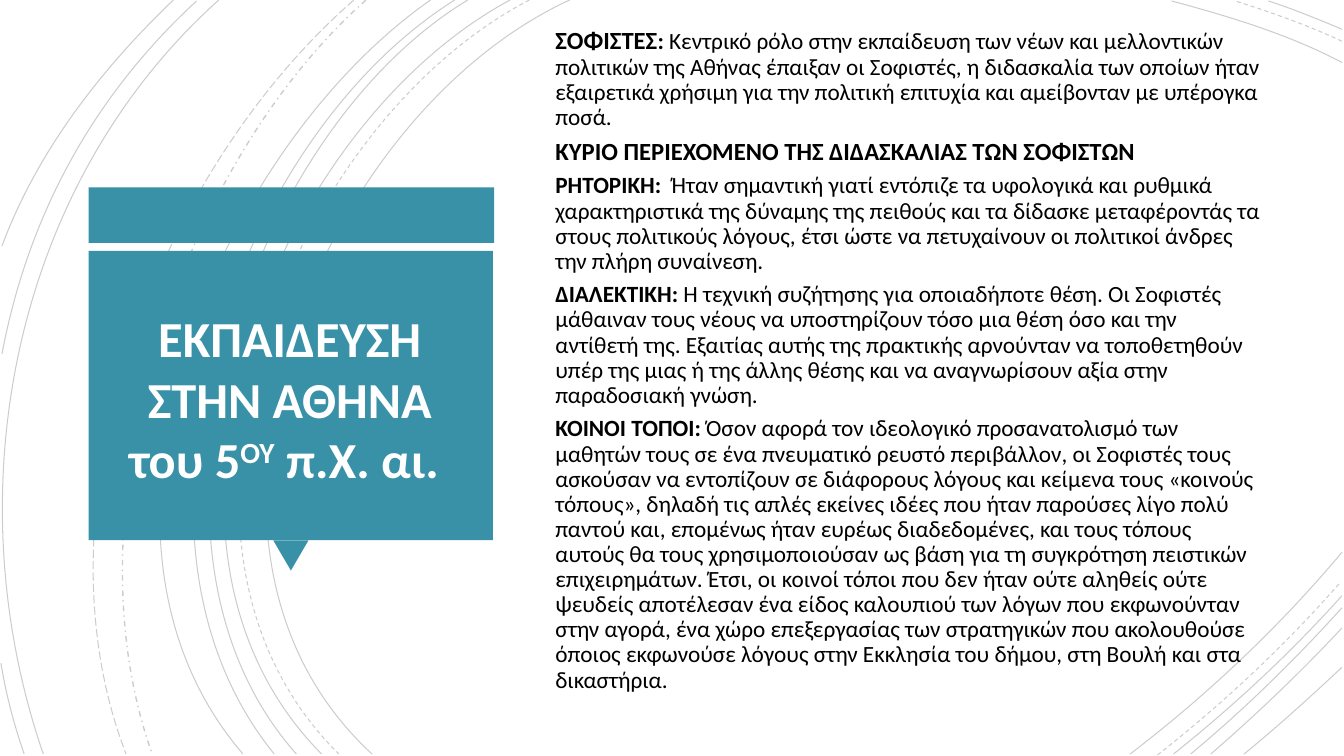
from typing import NamedTuple

from lxml.etree import SubElement
from pptx import Presentation
from pptx.dml.color import RGBColor
from pptx.enum.dml import MSO_LINE as DASH
from pptx.enum.shapes import MSO_SHAPE as SHAPE
from pptx.enum.text import MSO_ANCHOR as ANCHOR, MSO_AUTO_SIZE as AUTO, PP_ALIGN as ALIGN
from pptx.oxml.ns import qn
from pptx.util import Inches, Pt

TEAL = RGBColor(0x38, 0x91, 0xA7)
WHITE = RGBColor(0xFF, 0xFF, 0xFF)
BLACK = RGBColor(0x00, 0x00, 0x00)
FONT = "Calibri"
HEAD_SIZE, BODY_SIZE, TITLE_SIZE = 17.6, 16.6, 36


class Arc(NamedTuple):
    points: tuple
    dash: DASH = DASH.SOLID
    width: float = 0.75


class Panel(NamedTuple):
    kind: SHAPE
    box: tuple
    rotation: int = 0


class Span(NamedTuple):
    text: str
    size: float = BODY_SIZE
    bold: bool = False
    color: RGBColor = BLACK
    baseline: int = 0


ARCS = [
    Arc(((5.65, 0), (3.15, 1.15), (1.43, 5.4), (3.69, 7.48))),
    Arc(((13.31, 0.62), (12.78, 0.34), (12.18, 0.16), (11.62, 0.01))),
    Arc(((11.21, 7.48), (11.97, 6.9), (12.69, 6.22), (13.31, 5.48))),
    Arc(((5.25, 0), (2.85, 1.25), (1.23, 5.37), (3.36, 7.48)), DASH.DASH),
    Arc(((13.31, 0.41), (12.97, 0.25), (12.6, 0.12), (12.25, 0.01)), DASH.DASH),
    Arc(((11.48, 7.49), (12.13, 6.98), (12.75, 6.4), (13.3, 5.77)), DASH.DASH),
    Arc(((5.06, 0), (2.7, 1.27), (1.1, 5.37), (3.19, 7.48))),
    Arc(((13.31, 0.29), (13.07, 0.19), (12.83, 0.09), (12.58, 0.01))),
    Arc(((11.64, 7.48), (12.23, 7.01), (12.8, 6.48), (13.31, 5.91))),
    Arc(((4.64, 0), (2.44, 1.33), (1.1, 5.41), (2.94, 7.48))),
    Arc(((11.81, 7.48), (12.34, 7.04), (12.84, 6.55), (13.31, 6.03))),
    Arc(((4.51, 0), (2.31, 1.38), (0.97, 5.33), (2.72, 7.48))),
    Arc(((12.01, 7.48), (12.46, 7.09), (12.9, 6.67), (13.31, 6.23))),
    Arc(((4.27, 0), (2.17, 1.47), (0.53, 5.29), (2.41, 7.48))),
    Arc(((12.34, 7.48), (12.67, 7.21), (12.99, 6.92), (13.31, 6.62))),
    Arc(((3.63, 0), (1.76, 1.66), (0.65, 5.09), (1.51, 7.48)), DASH.DASH_DOT, 1),
    Arc(((3.51, 0), (1.57, 1.69), (0.29, 4.99), (1.25, 7.48)), DASH.LONG_DASH),
    Arc(((2.17, 0), (0.11, 1.85), (-0.46, 4.9), (0.43, 7.48))),
    Arc(((1.95, 0.01), (0.92, 0.96), (0.28, 2.14), (0.02, 3.51))),
    Arc(((0.01, 6.58), (0.06, 6.89), (0.14, 7.19), (0.24, 7.48))),
    Arc(((1.72, 0), (1, 0.69), (0.37, 1.5), (0.02, 2.44))),
]

PANELS = [
    Panel(SHAPE.RECTANGLE, (0.88, 1.86, 4.02, 0.55)),
    Panel(SHAPE.ISOSCELES_TRIANGLE, (2.71, 5.36, 0.35, 0.3), 180),
    Panel(SHAPE.RECTANGLE, (0.88, 2.49, 4.01, 2.87)),
]

TITLE = [
    Span("ΕΚΠΑΙΔΕΥΣΗ ΣΤΗΝ ΑΘΗΝΑ του 5", TITLE_SIZE, True, WHITE),
    Span("ΟΥ", TITLE_SIZE, True, WHITE, 30000),
    Span(" π.Χ. αι. ", TITLE_SIZE, True, WHITE),
]

BODY = [
    [Span("ΣΟΦΙΣΤΕΣ", HEAD_SIZE, True), Span(": ", bold=True),
     Span("Κεντρικό ρόλο στην εκπαίδευση των νέων και μελλοντικών πολιτικών της Αθήνας "
          "έπαιξαν οι Σοφιστές, η διδασκαλία των οποίων ήταν εξαιρετικά χρήσιμη για την "
          "πολιτική επιτυχία και αμείβονταν με υπέρογκα ποσά.")],
    [Span("ΚΥΡΙΟ ΠΕΡΙΕΧΟΜΕΝΟ ΤΗΣ ΔΙΔΑΣΚΑΛΙΑΣ ΤΩΝ ΣΟΦΙΣΤΩΝ", HEAD_SIZE, True)],
    [Span("ΡΗΤΟΡΙΚΗ:  ", bold=True),
     Span("Ήταν σημαντική γιατί εντόπιζε τα υφολογικά και ρυθμικά χαρακτηριστικά της "
          "δύναμης της πειθούς και τα δίδασκε μεταφέροντάς τα στους πολιτικούς λόγους, "
          "έτσι ώστε να πετυχαίνουν οι πολιτικοί άνδρες την πλήρη συναίνεση.")],
    [Span("ΔΙΑΛΕΚΤΙΚΗ: ", bold=True),
     Span("Η τεχνική συζήτησης για οποιαδήποτε θέση. Οι Σοφιστές μάθαιναν τους νέους να "
          "υποστηρίζουν τόσο μια θέση όσο και την αντίθετή της. Εξαιτίας αυτής της "
          "πρακτικής αρνούνταν να τοποθετηθούν υπέρ της μιας ή της άλλης θέσης και να "
          "αναγνωρίσουν αξία στην παραδοσιακή γνώση.")],
    [Span("ΚΟΙΝΟΙ ΤΟΠΟΙ: ", bold=True),
     Span("Όσον αφορά τον ιδεολογικό προσανατολισμό των μαθητών τους σε ένα πνευματικό "
          "ρευστό περιβάλλον, οι Σοφιστές τους ασκούσαν να εντοπίζουν σε διάφορους λόγους "
          "και κείμενα τους «κοινούς τόπους», δηλαδή τις απλές εκείνες ιδέες που ήταν "
          "παρούσες λίγο πολύ παντού και, επομένως ήταν ευρέως διαδεδομένες, και τους "
          "τόπους αυτούς θα τους χρησιμοποιούσαν ως βάση για τη συγκρότηση πειστικών "
          "επιχειρημάτων. Έτσι, οι κοινοί τόποι που δεν ήταν ούτε αληθείς ούτε ψευδείς "
          "αποτέλεσαν ένα είδος καλουπιού των λόγων που εκφωνούνταν στην αγορά, ένα χώρο "
          "επεξεργασίας των στρατηγικών που ακολουθούσε όποιος εκφωνούσε λόγους στην "
          "Εκκλησία του δήμου, στη Βουλή και στα δικαστήρια.")],
]

FRAME = dict(word_wrap=True, auto_size=AUTO.NONE, vertical_anchor=ANCHOR.MIDDLE)
TITLE_PARAGRAPH = dict(alignment=ALIGN.CENTER)
BODY_PARAGRAPH = dict(alignment=ALIGN.LEFT, line_spacing=0.9, space_before=Pt(6))


def apply(target: object, values: dict) -> None:
    for name, value in values.items():
        setattr(target, name, value)


def draw_arc(shapes, arc: Arc) -> None:
    start, *rest = [(Inches(x), Inches(y)) for x, y in arc.points]
    builder = shapes.build_freeform(*start)
    builder.add_line_segments(rest, close=False)
    sp = builder.convert_to_shape()
    sp.shadow.inherit = False
    sp.fill.background()
    sp.line.color.rgb = BLACK
    apply(sp.line, dict(width=Pt(arc.width), dash_style=arc.dash))
    color = next(sp.line._ln.iter(qn("a:srgbClr")))
    SubElement(color, qn("a:alpha"), val="20000")
    outline = next(sp._element.iter(qn("a:path")))
    curve = SubElement(outline, qn("a:cubicBezTo"))
    for segment in outline.findall(qn("a:lnTo")):
        curve.append(segment[0])
        outline.remove(segment)


def draw_panel(shapes, panel: Panel) -> None:
    sp = shapes.add_shape(panel.kind, *map(Inches, panel.box))
    sp.shadow.inherit = False
    sp.rotation = panel.rotation
    sp.fill.solid()
    sp.fill.fore_color.rgb = TEAL
    sp.line.fill.background()


def write(tf, paragraphs: list[list[Span]], style: dict) -> None:
    apply(tf, FRAME)
    for i, spans in enumerate(paragraphs):
        p = tf.add_paragraph() if i else tf.paragraphs[0]
        apply(p, style)
        for span in spans:
            r = p.add_run()
            r.text = span.text
            apply(r.font, dict(name=FONT, size=Pt(span.size), bold=span.bold))
            r.font.color.rgb = span.color
            if span.baseline:
                r.font._element.set("baseline", str(span.baseline))


def main() -> None:
    prs = Presentation()
    apply(prs, dict(slide_width=Inches(13.33), slide_height=Inches(7.5)))
    s = prs.slides.add_slide(prs.slide_layouts[5])
    for arc in ARCS:
        draw_arc(s.shapes, arc)
    for panel in PANELS:
        draw_panel(s.shapes, panel)

    title = s.shapes.title
    apply(title, dict(left=Inches(0.99), top=Inches(2.64),
                      width=Inches(3.77), height=Inches(2.62)))
    write(title.text_frame, [TITLE], TITLE_PARAGRAPH)
    s.shapes._spTree.append(title._element)

    body = s.shapes.add_textbox(*map(Inches, (5.41, 0.29, 7.22, 6.86)))
    body.text_frame.margin_bottom = Inches(0.33)
    write(body.text_frame, BODY, BODY_PARAGRAPH)
    prs.save("out.pptx")


if __name__ == "__main__":
    main()
